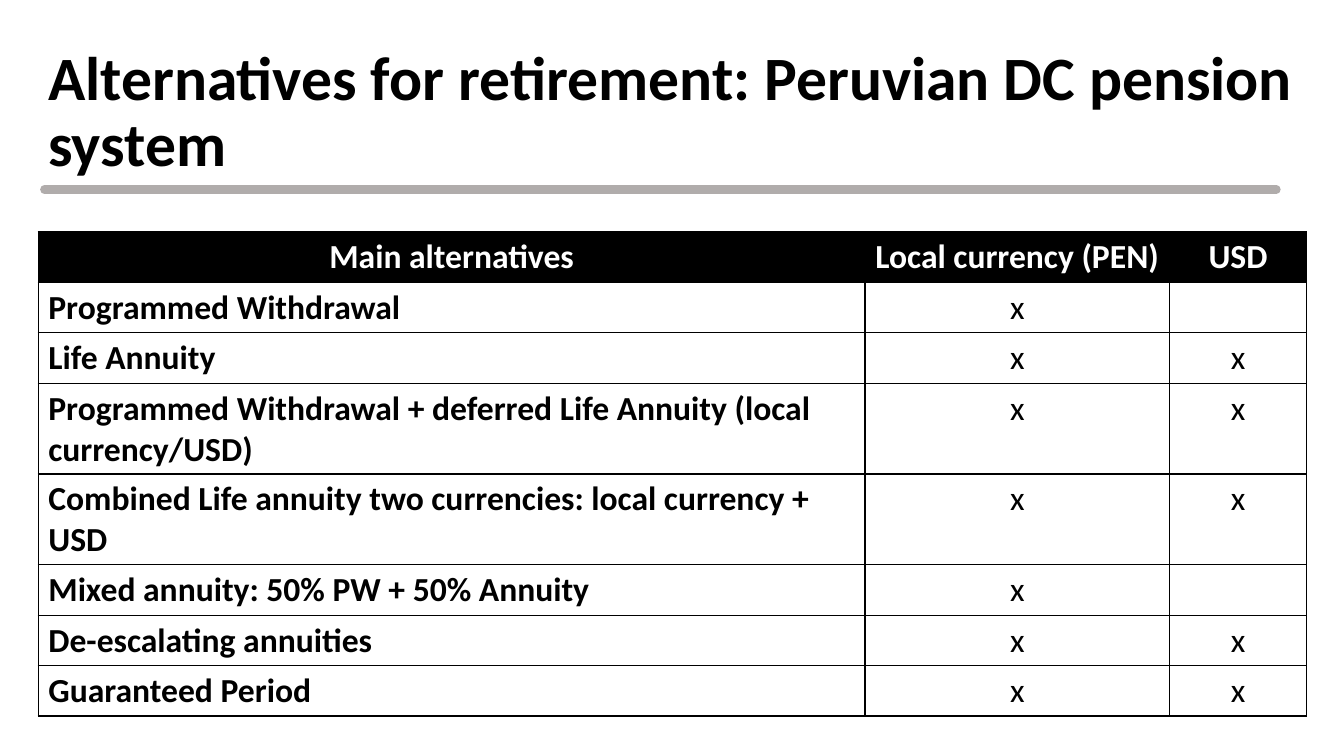
from lxml import etree
from pptx import Presentation
from pptx import util as u
from pptx.dml.color import RGBColor
from pptx.enum import shapes, text
from pptx.oxml import parse_xml
from pptx.oxml.ns import nsdecls, qn

COLORS = {"ink": "000000", "paper": "FFFFFF", "rule": "B0ACAB"}
W, H = 13.33, 7.5
LEFT, WIDTH = 0.38, 12.58
COLS = [8.2, 3.02, 1.36]
ROW_H = 0.5

HEADER = ["Main alternatives", "Local currency (PEN)", "USD"]
ALTERNATIVES = [
    ("Programmed Withdrawal", "x", ""),
    ("Life Annuity", "x", "x"),
    ("Programmed Withdrawal + deferred Life Annuity (local currency/USD)", "x", "x"),
    ("Combined Life annuity two currencies: local currency + USD", "x", "x"),
    ("Mixed annuity: 50% PW + 50% Annuity", "x", ""),
    ("De-escalating annuities", "x", "x"),
    ("Guaranteed Period", "x", "x"),
]


def write(tf, words, size=24, color="ink", bold=False, align="LEFT", spacing=None):
    p = tf.paragraphs[0]
    p.alignment = getattr(text.PP_ALIGN, align)
    p.line_spacing = spacing
    p.font.size = u.Pt(size)
    if words:
        r = p.add_run()
        r.text = words
        r.font.name = "Calibri"
        r.font.size = u.Pt(size)
        r.font.bold = bold
        r.font.color.rgb = RGBColor.from_string(COLORS[color])


def add_borders(cell):
    tcPr = cell._tc.get_or_add_tcPr()
    for i, side in enumerate(("lnL", "lnR", "lnT", "lnB")):
        tcPr.insert(i, parse_xml(
            f'<a:{side} {nsdecls("a")} w="12700"><a:solidFill>'
            f'<a:srgbClr val="{COLORS["ink"]}"/></a:solidFill></a:{side}>'))


prs = Presentation()
prs.slide_width, prs.slide_height = u.Inches(W), u.Inches(H)
s = prs.slides.add_slide(prs.slide_layouts[6])

# Title
tf = s.shapes.add_textbox(u.Inches(LEFT), u.Inches(0.4), u.Inches(WIDTH), u.Inches(1.45)).text_frame
tf.word_wrap = True
tf.vertical_anchor = text.MSO_ANCHOR.MIDDLE
write(tf, "Alternatives for retirement: Peruvian DC pension system", size=44, bold=True, spacing=0.9)

# Table of alternatives
rows = [HEADER, *ALTERNATIVES]
table = s.shapes.add_table(len(rows), len(COLS), u.Inches(LEFT), u.Inches(2.3),
                           u.Inches(WIDTH), u.Inches(ROW_H * len(rows))).table
table.horz_banding = False
for col, width in zip(table.columns, COLS):
    col.width = u.Inches(width)
for i, row in enumerate(rows):
    head = i == 0
    for j, words in enumerate(row):
        cell = table.cell(i, j)
        cell.fill.solid()
        cell.fill.fore_color.rgb = RGBColor.from_string(COLORS["ink" if head else "paper"])
        if head:
            cell.vertical_anchor = text.MSO_ANCHOR.MIDDLE
        write(cell.text_frame, words, color="paper" if head else "ink",
              bold=head or j == 0, align="CENTER" if head or j else "LEFT")
        add_borders(cell)

# Rule under the title, with round ends
rule = s.shapes.add_connector(shapes.MSO_CONNECTOR.STRAIGHT, u.Inches(0.44), u.Inches(1.88),
                              u.Inches(12.66), u.Inches(1.88))
rule.line.color.rgb = RGBColor.from_string(COLORS["rule"])
rule.line.width = u.Pt(6)
spPr = rule._element.spPr
spPr.find(qn("a:ln")).set("cap", "rnd")
etree.SubElement(spPr, qn("a:effectLst"))

prs.save("out.pptx")
